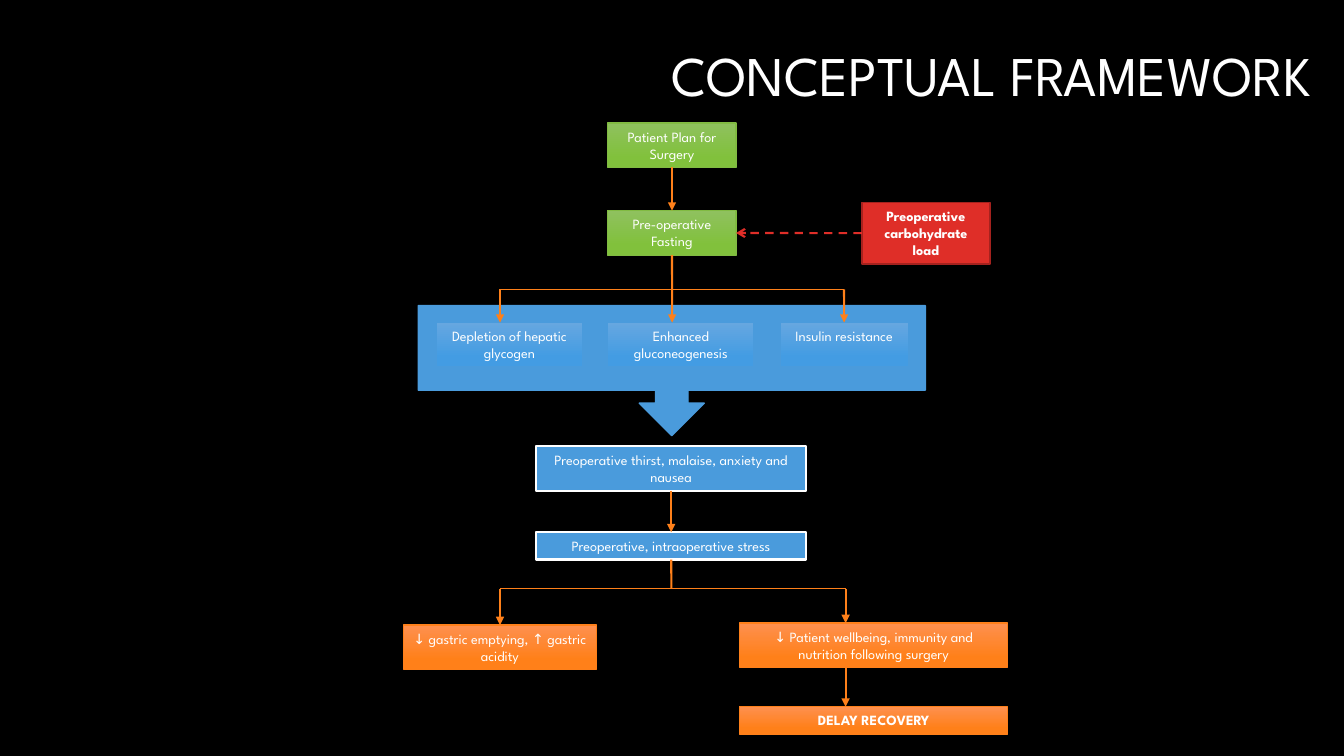
from pptx import Presentation
from pptx.dml.color import RGBColor
from pptx.enum.dml import MSO_LINE
from pptx.enum.shapes import MSO_CONNECTOR, MSO_SHAPE
from pptx.enum.text import MSO_ANCHOR, MSO_AUTO_SIZE, PP_ALIGN
from pptx.oxml.ns import qn
from pptx.util import Cm, Pt
from lxml.etree import SubElement

FONT = "League Spartan"
WHITE = "FFFFFF"
BLUE = "4A9BDC"
ORANGE = "FE801A"
RED = "DF2E28"
GREENS = ("8FC15E", "81C13C")
BLUES = ("66A7E0", "439CE3")
ORANGES = ("FE904F", "FF8019")
TALL, SHORT = 1.12, 0.69


def color(text):
    return RGBColor.from_string(text)


def style(font, size, bold=False):
    font.name = FONT
    font.size = Pt(size)
    font.bold = bold
    font.color.rgb = color(WHITE)


def panel(slide, kind, box, fill, edge, width):
    shape = slide.shapes.add_shape(kind, *[Cm(v) for v in box])
    shape.shadow.inherit = False
    if isinstance(fill, tuple):
        shape.fill.gradient()
        shape.fill.gradient_angle = 270
        for stop, tone, place in zip(shape.fill.gradient_stops, fill, (0, 0.78)):
            stop.color.rgb = color(tone)
            stop.position = place
    else:
        shape.fill.solid()
        shape.fill.fore_color.rgb = color(fill)
    shape.line.color.rgb = color(edge)
    shape.line.width = Pt(width)
    return shape


def label(slide, text, box, fill, edge, width=0.75, bold=False):
    shape = panel(slide, MSO_SHAPE.RECTANGLE, box, fill, edge, width)
    frame = shape.text_frame
    frame.word_wrap = True
    frame.auto_size = MSO_AUTO_SIZE.SHAPE_TO_FIT_TEXT
    frame.vertical_anchor = MSO_ANCHOR.TOP
    frame.text = text
    part = frame.paragraphs[0]
    part.alignment = PP_ALIGN.CENTER
    style(part.runs[0].font, 10.1, bold)
    return shape


def link(slide, start, end, head="triangle", tone=ORANGE, width=1.5,
         source=None, target=None):
    line = slide.shapes.add_connector(
        MSO_CONNECTOR.STRAIGHT, *[Cm(v) for v in start + end])
    if source:
        line.begin_connect(*source)
    if target:
        line.end_connect(*target)
    line.line.color.rgb = color(tone)
    line.line.width = Pt(width)
    if head:
        SubElement(line.line._get_or_add_ln(), qn("a:tailEnd"), type=head)
    SubElement(line._element.spPr, qn("a:effectLst"))
    return line


def heading(slide, box):
    title = slide.shapes.title
    title.left, title.top, title.width, title.height = [Cm(v) for v in box]
    frame = title.text_frame
    frame.text = "CONCEPTUAL FRAMEWORK"
    frame.word_wrap = True
    frame.vertical_anchor = MSO_ANCHOR.MIDDLE
    part = frame.paragraphs[0]
    part.alignment = PP_ALIGN.RIGHT
    part.line_spacing = 0.9
    style(part.runs[0].font, 40)


def intake(slide, x, y, wide):
    mid = x + wide / 2
    low = y + 2.21
    plan, fast = [
        label(slide, text, (x, top, wide, TALL), GREENS, "81BB42")
        for text, top in (("Patient Plan for Surgery", y),
                          ("Pre-operative Fasting", low))]
    link(slide, (mid, y + TALL), (mid, low), source=(plan, 2), target=(fast, 0))
    load = label(slide, "Preoperative carbohydrate load",
                 (x + 6.4, low - 0.21, wide, 1.55), RED, "A5221E", 1, True)
    dash = link(slide, (x + 6.4, low + 0.56), (x + wide, low + 0.56),
                "arrow", RED, source=(load, 1), target=(fast, 3))
    dash.line.dash_style = MSO_LINE.DASH
    return fast


def changes(slide, x, y, wide, high, fast):
    panel(slide, MSO_SHAPE.DOWN_ARROW_CALLOUT, (x, y, wide, high), BLUE, BLUE, 1)
    top, bar = y + 0.43, y - 0.41
    left, mid, right = x + 2.06, x + 6.4, x + 10.73
    items = (("Depletion of hepatic glycogen", 0.46, 3.68),
             ("Enhanced gluconeogenesis", 4.78, 3.68),
             ("Insulin resistance", 9.12, 3.23))
    boxes = [label(slide, text, (x + dx, top, span, TALL), BLUES, BLUE)
             for text, dx, span in items]
    link(slide, (left, bar), (right, bar), None, width=1)
    link(slide, (left, bar), (left, top))
    link(slide, (mid, bar), (mid, top), source=(fast, 2))
    link(slide, (right, bar), (right, top), target=(boxes[2], 0))


def effects(slide, x, y, wide):
    mid, low = x + wide / 2, y + 2.16
    thirst = label(slide, "Preoperative thirst, malaise, anxiety and nausea",
                   (x, y, wide, TALL), BLUE, WHITE, 1.5)
    stress = label(slide, "Preoperative, intraoperative stress",
                   (x, low, wide, SHORT), BLUE, WHITE, 1.5)
    link(slide, (mid, y + TALL), (mid, low), source=(thirst, 2), target=(stress, 0))
    return stress


def outcomes(slide, x, y, stress):
    bar, left, mid, right = y - 0.87, x + 2.44, x + 6.76, x + 11.15
    side, last = x + 8.48, y + 2.11
    gastric = label(slide, "↓ gastric emptying, ↑ gastric acidity",
                    (x, y + 0.05, 4.88, TALL), ORANGES, ORANGE)
    label(slide, "↓ Patient wellbeing, immunity and nutrition following surgery",
          (side, y, 6.76, TALL), ORANGES, ORANGE)
    label(slide, "DELAY RECOVERY", (side, last, 6.76, SHORT),
          ORANGES, ORANGE, bold=True)
    link(slide, (left, bar), (right, bar), None, width=1)
    link(slide, (mid, bar - 0.73), (mid, bar), None, source=(stress, 2))
    link(slide, (left, bar), (left, y + 0.05), target=(gastric, 0))
    link(slide, (right, bar), (right, y))
    link(slide, (right, y + TALL), (right, last))


def main():
    deck = Presentation()
    deck.slide_width, deck.slide_height = Cm(33.87), Cm(19.05)
    slide = deck.slides.add_slide(deck.slide_layouts[5])
    slide.background.fill.solid()
    slide.background.fill.fore_color.rgb = color("000000")
    heading(slide, (9.37, 0.18, 23.93, 3.58))
    fast = intake(slide, 15.32, 3.1, 3.23)
    changes(slide, 10.54, 7.7, 12.78, 3.28, fast)
    stress = effects(slide, 13.51, 11.25, 6.81)
    outcomes(slide, 10.16, 15.7, stress)
    deck.save("out.pptx")


if __name__ == "__main__":
    main()
